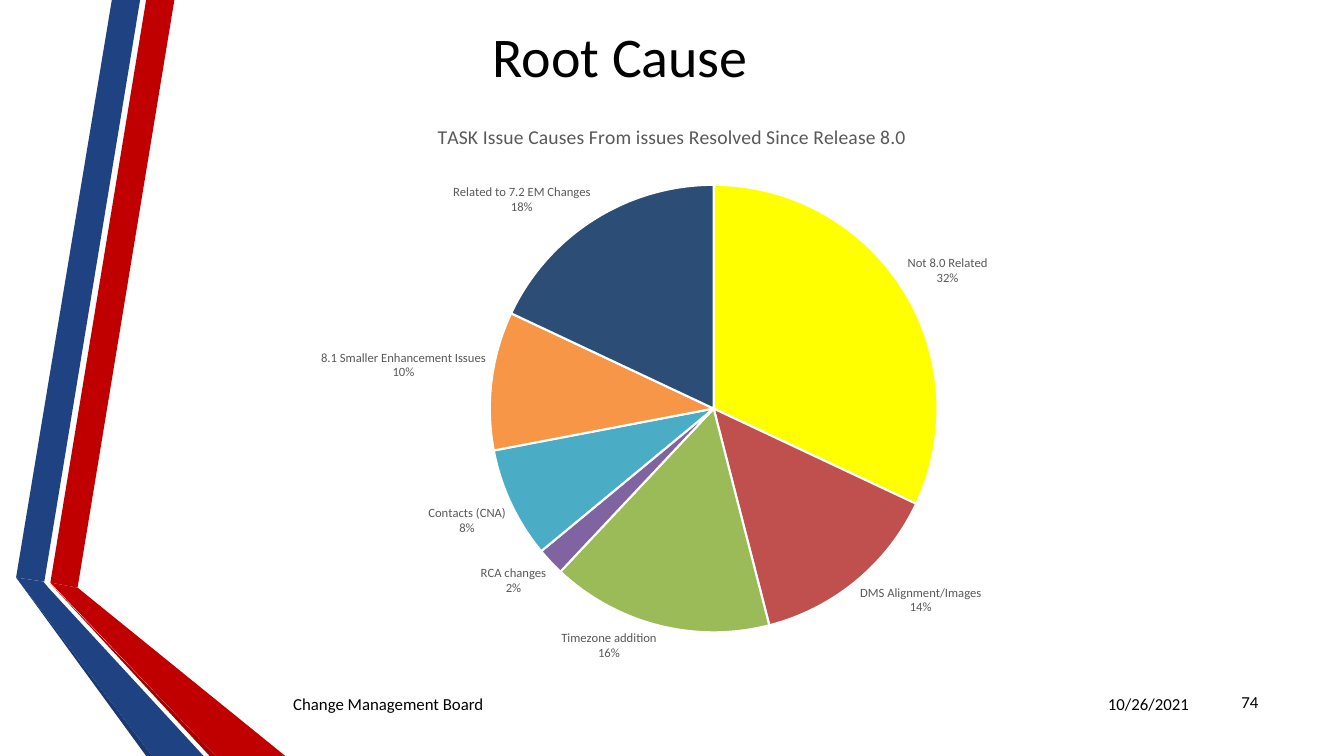
import pptx
import pptx.chart.data
import pptx.dml.color
import pptx.enum.chart
import pptx.enum.text
import pptx.oxml
import pptx.oxml.ns
import pptx.util

Inches = pptx.util.Inches
Pt = pptx.util.Pt
ALIGN = pptx.enum.text.PP_ALIGN
ANCHOR = pptx.enum.text.MSO_ANCHOR
FONT = "Calibri"
BLUE, RED = "1F4283", "C00000"

# Ribbon outlines, back to front: fill and corner points in inches
RIBBONS = [
    (RED, [(0.5, 5.78), (0.77, 5.83), (1.73, 0), (1.45, 0)]),
    (BLUE, [(1.39, 0), (1.11, 0), (0.16, 5.73), (0.44, 5.77)]),
    ("1B396F", [(0.16, 5.73), (1.45, 7.5), (1.51, 7.5)]),
    ("A40000", [(0.5, 5.79), (2.08, 7.5), (2.14, 7.5)]),
    (RED, [(0.5, 5.78), (2.14, 7.5), (2.83, 7.5), (0.77, 5.83)]),
    (BLUE, [(2.02, 7.5), (0.48, 5.83), (0.43, 5.77), (0.16, 5.73), (1.51, 7.5)]),
]

# Cause, percentage and slice colour
CAUSES = [
    ("Not 8.0 Related", 32, "FFFF00"),
    ("DMS Alignment/Images", 14, "C0504D"),
    ("Timezone addition", 16, "9BBB59"),
    ("RCA changes", 2, "8064A2"),
    ("Contacts (CNA)", 8, "4BACC6"),
    ("8.1 Smaller Enhancement Issues", 10, "F79646"),
    ("Related to 7.2 EM Changes", 18, "2C4D75"),
]


def rgb(value):
    return pptx.dml.color.RGBColor.from_string(value)


def style_font(font, size, color="000000"):
    font.name = FONT
    font.size = Pt(size)
    font.bold = False
    font.color.rgb = rgb(color)


def add_run(p, text, size, color="000000"):
    r = p.add_run()
    r.text = text
    style_font(r.font, size, color)


def add_ribbon(s, color, points):
    corners = [(Inches(x), Inches(y)) for x, y in points]
    builder = s.shapes.build_freeform(*corners[0])
    builder.add_line_segments(corners[1:], close=True)
    sp = builder.convert_to_shape()
    sp.shadow.inherit = False
    sp.fill.solid()
    sp.fill.fore_color.rgb = rgb(color)
    sp.line.fill.background()


def set_title(s, text):
    sp = s.shapes.title
    sp.left, sp.top = Inches(1.74), Inches(0.16)
    sp.width, sp.height = Inches(8.82), Inches(0.77)
    tf = sp.text_frame
    tf.vertical_anchor = ANCHOR.TOP
    p = tf.paragraphs[0]
    p.alignment = ALIGN.CENTER
    add_run(p, text, 40)


def add_footer(s, text, left, top, width, align):
    sp = s.shapes.add_textbox(Inches(left), Inches(top), Inches(width), Inches(0.4))
    tf = sp.text_frame
    tf.word_wrap = True
    tf.vertical_anchor = ANCHOR.MIDDLE
    p = tf.paragraphs[0]
    p.alignment = align
    add_run(p, text, 12)


def place_plot(chart, x, y, w, h):
    """Fix the pie's inner area, in fractions of the chart frame."""
    ns = pptx.oxml.ns
    area = chart._chartSpace.find(".//" + ns.qn("c:plotArea"))
    for old in area.findall(ns.qn("c:layout")):
        area.remove(old)
    area.insert(0, pptx.oxml.parse_xml(
        f'<c:layout {ns.nsdecls("c")}><c:manualLayout><c:layoutTarget val="inner"/>'
        '<c:xMode val="edge"/><c:yMode val="edge"/>'
        f'<c:x val="{x}"/><c:y val="{y}"/><c:w val="{w}"/><c:h val="{h}"/>'
        "</c:manualLayout></c:layout>"))


def add_pie(s, title):
    data = pptx.chart.data.CategoryChartData()
    data.categories = [name for name, _, _ in CAUSES]
    data.add_series("Series 1", [value for _, value, _ in CAUSES])
    chart = s.shapes.add_chart(
        pptx.enum.chart.XL_CHART_TYPE.PIE,
        Inches(1.15), Inches(1.02), Inches(11.03), Inches(5.73), data).chart
    style_font(chart.font, 10)
    chart.has_legend = False
    chart.has_title = True
    add_run(chart.chart_title.text_frame.paragraphs[0], title, 14, "595959")
    place_plot(chart, 0.336, 0.142, 0.403, 0.775)

    # Slices
    plot = chart.plots[0]
    plot.vary_by_categories = True
    for i, (_, _, color) in enumerate(CAUSES):
        fmt = plot.series[0].points[i].format
        fmt.fill.solid()
        fmt.fill.fore_color.rgb = rgb(color)
        fmt.line.color.rgb = rgb("FFFFFF")
        fmt.line.width = Pt(1.5)

    # Labels
    labels = plot.series[0].data_labels
    labels.show_category_name = True
    labels.show_percentage = True
    labels.show_value = False
    labels.number_format = "0%"
    labels.number_format_is_linked = False
    labels.position = pptx.enum.chart.XL_LABEL_POSITION.OUTSIDE_END
    style_font(labels.font, 9, "595959")


def main():
    prs = pptx.Presentation()
    prs.slide_width, prs.slide_height = Inches(13.33), Inches(7.5)
    s = prs.slides.add_slide(prs.slide_layouts[5])
    for color, points in RIBBONS:
        add_ribbon(s, color, points)
    set_title(s, "Root Cause")
    add_pie(s, "TASK Issue Causes From issues Resolved Since Release 8.0")

    # Footer line
    add_footer(s, "Change Management Board", 2.81, 6.78, 7.75, ALIGN.LEFT)
    add_footer(s, "10/26/2021", 10.64, 6.78, 1.25, ALIGN.RIGHT)
    add_footer(s, "74", 11.98, 6.76, 0.6, ALIGN.RIGHT)
    prs.save("out.pptx")


if __name__ == "__main__":
    main()
